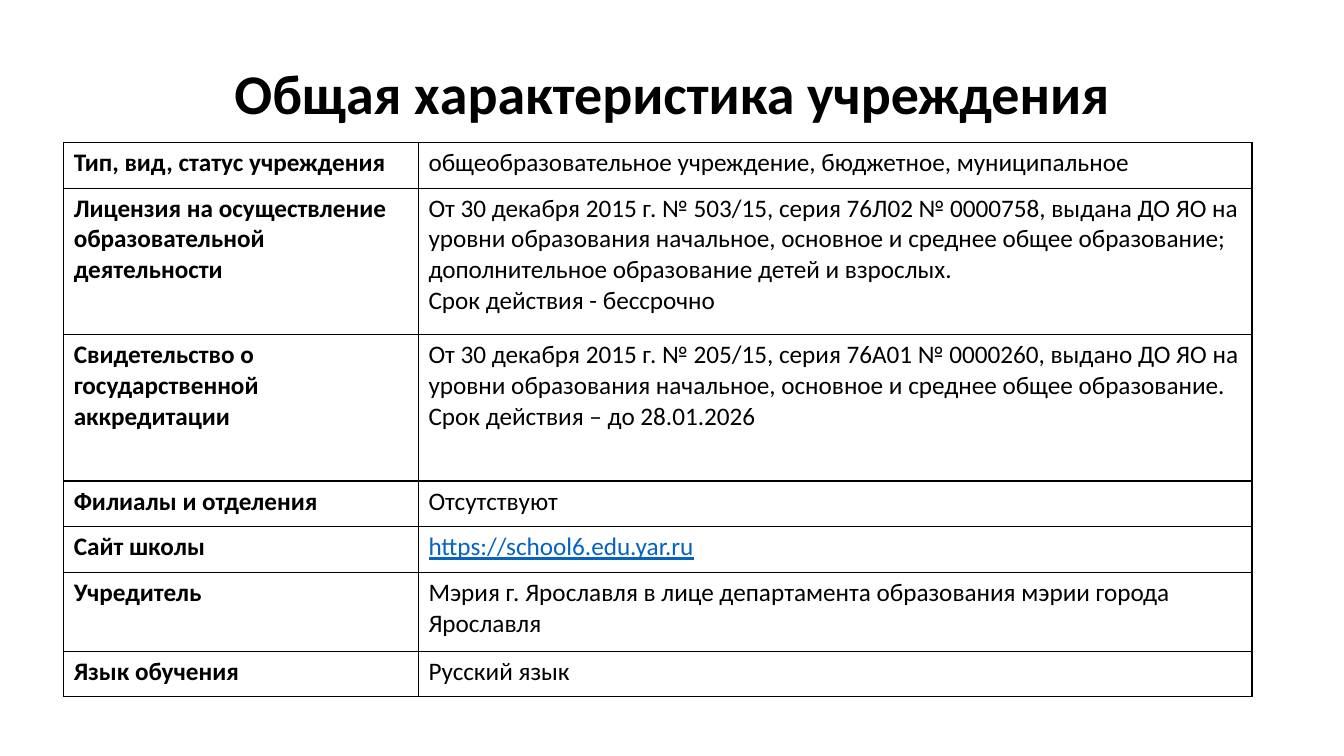
from dataclasses import dataclass

from lxml.etree import SubElement
from pptx import Presentation
from pptx.dml.color import RGBColor
from pptx.enum.text import MSO_ANCHOR, MSO_AUTO_SIZE, PP_ALIGN
from pptx.oxml.ns import qn
from pptx.table import _Cell
from pptx.text.text import TextFrame
from pptx.util import Pt

BLACK = RGBColor(0x00, 0x00, 0x00)
WHITE = RGBColor(0xFF, 0xFF, 0xFF)
LINK_BLUE = RGBColor(0x05, 0x63, 0xC1)
FONT = "Calibri"
COLUMN_WIDTHS = (253.4, 595.4)


@dataclass(frozen=True)
class Fact:
    label: str
    details: tuple[str, ...]
    height: float = 32.6
    is_link: bool = False


FACTS = (
    Fact("Тип, вид, статус учреждения",
         ("общеобразовательное учреждение, бюджетное, муниципальное",)),
    Fact("Лицензия на осуществление образовательной деятельности",
         ("От 30 декабря 2015 г. № 503/15, серия 76Л02 № 0000758, выдана ДО ЯО "
          "на уровни образования начальное, основное и среднее общее образование; "
          "дополнительное образование детей и взрослых.",
          "Срок действия - бессрочно"), height=104.6),
    Fact("Свидетельство о государственной аккредитации",
         ("От 30 декабря 2015 г. № 205/15, серия 76А01 № 0000260, выдано ДО ЯО "
          "на уровни образования начальное, основное и среднее общее образование.",
          "Срок действия – до 28.01.2026"), height=104.6),
    Fact("Филиалы и отделения", ("Отсутствуют",)),
    Fact("Сайт школы", ("https://school6.edu.yar.ru",), is_link=True),
    Fact("Учредитель",
         ("Мэрия г. Ярославля в лице департамента образования мэрии города Ярославля",),
         height=56.4),
    Fact("Язык обучения", ("Русский язык",)),
)


def write_text(frame: TextFrame, *lines: str, size: float = 18, bold: bool = False,
               underline: bool = False, color: RGBColor = BLACK,
               align: PP_ALIGN = PP_ALIGN.LEFT, spacing: float = 1.0) -> None:
    frame.word_wrap = True
    for index, line in enumerate(lines):
        paragraph = frame.add_paragraph() if index else frame.paragraphs[0]
        paragraph.alignment = align
        paragraph.line_spacing = spacing
        run = paragraph.add_run()
        run.text = line
        run.font.name = FONT
        run.font.size = Pt(size)
        run.font.bold = bold
        run.font.underline = underline
        run.font.color.rgb = color


def style_cell(cell: _Cell) -> None:
    """Give the cell a thin black border on every side and a white fill."""
    properties = cell._tc.get_or_add_tcPr()
    for side in ("lnL", "lnR", "lnT", "lnB"):
        border = SubElement(properties, qn(f"a:{side}"), w=str(Pt(1)))
        line_fill = SubElement(border, qn("a:solidFill"))
        SubElement(line_fill, qn("a:srgbClr"), val=str(BLACK))
    cell.fill.solid()
    cell.fill.fore_color.rgb = WHITE


def main() -> None:
    presentation = Presentation()
    presentation.slide_width = Pt(960)
    presentation.slide_height = Pt(540)
    slide = presentation.slides.add_slide(presentation.slide_layouts[5])

    heading = slide.shapes.title
    heading.left, heading.top = Pt(66), Pt(28.8)
    heading.width, heading.height = Pt(828), Pt(80.4)
    heading.text_frame.auto_size = MSO_AUTO_SIZE.NONE
    heading.text_frame.vertical_anchor = MSO_ANCHOR.MIDDLE
    write_text(heading.text_frame, "Общая характеристика учреждения", size=40,
               bold=True, align=PP_ALIGN.CENTER, spacing=0.9)

    facts_table = slide.shapes.add_table(
        len(FACTS), len(COLUMN_WIDTHS), Pt(45.5), Pt(101.8),
        Pt(sum(COLUMN_WIDTHS)), Pt(sum(fact.height for fact in FACTS))).table
    facts_table.first_row = False
    facts_table.horz_banding = False
    for column, width in zip(facts_table.columns, COLUMN_WIDTHS):
        column.width = Pt(width)

    for row, fact in zip(facts_table.rows, FACTS):
        row.height = Pt(fact.height)
        label_cell, details_cell = row.cells
        write_text(label_cell.text_frame, fact.label, bold=True)
        write_text(details_cell.text_frame, *fact.details, underline=fact.is_link,
                   color=LINK_BLUE if fact.is_link else BLACK)
        for cell in row.cells:
            style_cell(cell)

    presentation.save("out.pptx")


if __name__ == "__main__":
    main()
